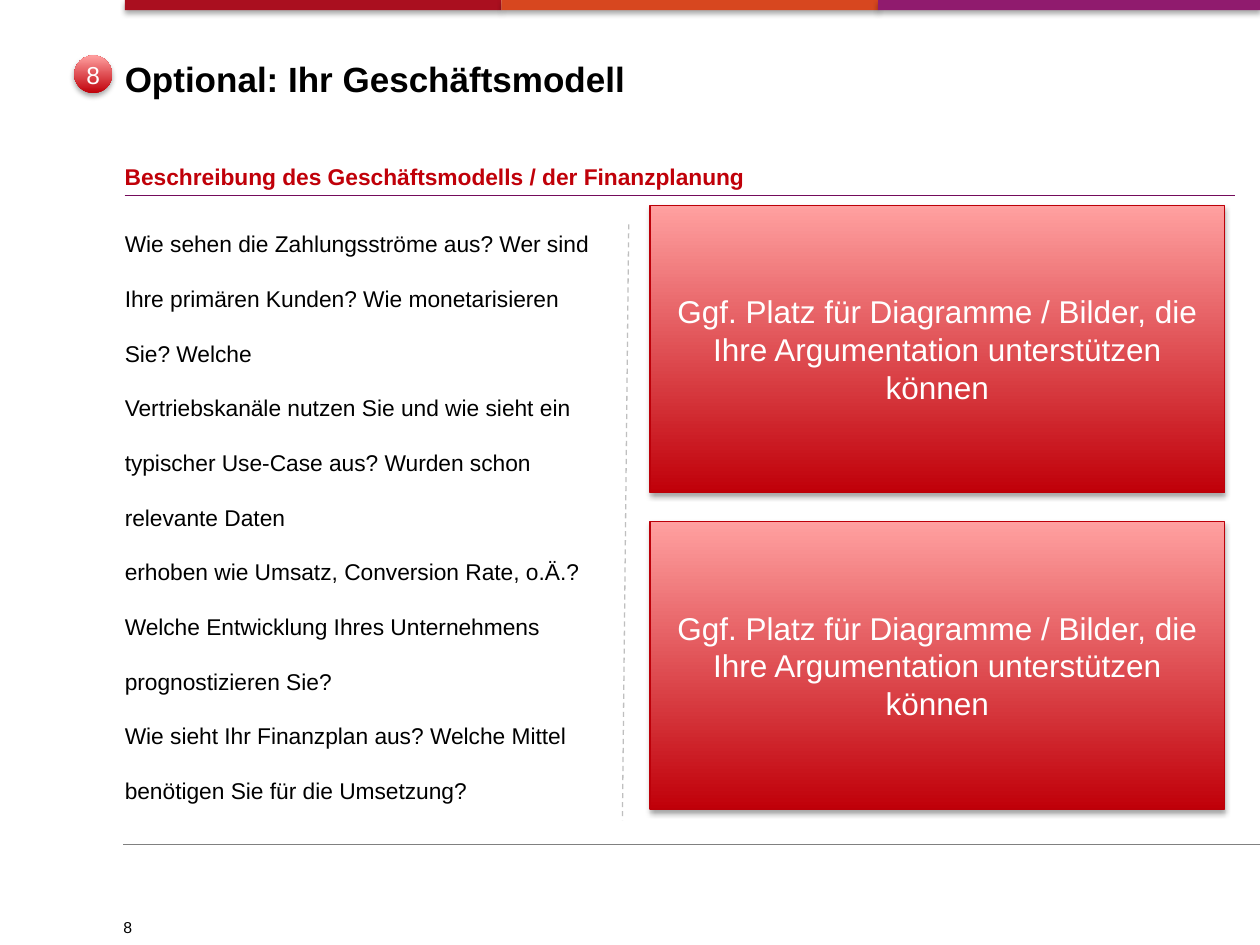
from lxml import etree
from pptx import Presentation
from pptx.dml.color import RGBColor
from pptx.enum import dml, shapes, text
from pptx.oxml import parse_xml
from pptx.oxml.ns import nsdecls, qn
from pptx.util import Inches, Pt

BLACK = RGBColor(0, 0, 0)
WHITE = RGBColor(0xFF, 0xFF, 0xFF)
RED = RGBColor(0xC0, 0x00, 0x09)
PINK = RGBColor(0xFF, 0xA0, 0xA0)
EDGE = RGBColor(0xBC, 0x00, 0x09)
BARS = [RGBColor(0xAA, 0x0F, 0x1F), RGBColor(0xD7, 0x47, 0x1F), RGBColor(0x90, 0x1B, 0x6E)]
PLUM = RGBColor(0x74, 0x0B, 0x5C)
GRAY = RGBColor(0x80, 0x80, 0x80)
PALE = RGBColor(0xBF, 0xBF, 0xBF)
LEFT = 0.99

SHADOW = (
    f'<a:effectLst {nsdecls("a")}>'
    '<a:outerShdw blurRad="39370" dist="22860" dir="5400000" rotWithShape="0">'
    '<a:srgbClr val="000000"><a:alpha val="35000"/></a:srgbClr>'
    '</a:outerShdw></a:effectLst>'
)


def write(frame, lines, size, color, bold=False, space=None,
          align=text.PP_ALIGN.LEFT, inset=0, wrap=True):
    frame.word_wrap = wrap
    frame.margin_left = frame.margin_right = Inches(inset)
    frame.margin_top = frame.margin_bottom = Inches(inset / 2)
    frame.text = "\n".join(lines)
    for para in frame.paragraphs:
        para.alignment = align
        para.line_spacing = space
        for run in para.runs:
            run.font.name = "Arial"
            run.font.size = Pt(size)
            run.font.bold = bold
            run.font.color.rgb = color


def draw(kind, x, y, w, h, fill=None, edge=None):
    item = slide.shapes.add_shape(kind, Inches(x), Inches(y), Inches(w), Inches(h))
    if fill:
        item.fill.solid()
        item.fill.fore_color.rgb = fill
    else:
        item.fill.gradient()
        item.fill.gradient_angle = 90
        for stop, color in zip(item.fill.gradient_stops, (RED, PINK)):
            stop.color.rgb = color
    if edge:
        item.line.color.rgb = edge
        item.line.width = Pt(0.75)
    else:
        item.line.fill.background()
    item._element.spPr.append(parse_xml(SHADOW))
    return item


deck = Presentation()
deck.slide_width, deck.slide_height = Inches(10), Inches(7.5)
slide = deck.slides.add_slide(deck.slide_layouts[5])
RECT = shapes.MSO_SHAPE.RECTANGLE
MID = text.PP_ALIGN.CENTER

# Coloured bars along the top edge
for i, color in enumerate(BARS):
    x = LEFT + i * 2.99
    draw(RECT, x, 0, min(2.99, 10 - x) if i < 2 else 10 - x, 0.08, color)

# Title
title = slide.shapes.title
title.left, title.top = Inches(LEFT), Inches(0.4)
title.width, title.height = Inches(8.81), Inches(0.96)
write(title.text_frame, ["Optional: Ihr Geschäftsmodell"], 20, BLACK, True, Pt(28))
title.text_frame.vertical_anchor = text.MSO_ANCHOR.TOP
title.text_frame.auto_size = text.MSO_AUTO_SIZE.NONE

# Subheading, questions and page number
QUERY = [
    "Wie sehen die Zahlungsströme aus? Wer sind Ihre primären Kunden? "
    "Wie monetarisieren Sie? Welche",
    "Vertriebskanäle nutzen Sie und wie sieht ein typischer Use-Case aus? "
    "Wurden schon relevante Daten",
    "erhoben wie Umsatz, Conversion Rate, o.Ä.? "
    "Welche Entwicklung Ihres Unternehmens prognostizieren Sie?",
    "Wie sieht Ihr Finanzplan aus? Welche Mittel benötigen Sie für die Umsetzung?",
]
HEAD = ["Beschreibung des Geschäftsmodells / der Finanzplanung"]
for x, y, w, h, lines, size, color, bold, space, wrap in [
    (LEFT, 1.29, 5.04, 0.24, HEAD, 13, RED, True, None, True),
    (LEFT, 1.61, 3.78, 4.75, QUERY, 13, BLACK, False, 2.0, True),
    (0.98, 7.27, 1.34, 0.19, ["8"], 9, BLACK, False, Pt(11.8), False),
]:
    box = slide.shapes.add_textbox(Inches(x), Inches(y), Inches(w), Inches(h))
    write(box.text_frame, lines, size, color, bold, space, wrap=wrap)

# Panels for diagrams
for y in (1.63, 4.14):
    panel = draw(RECT, 5.16, y, 4.56, 2.28, edge=EDGE)
    write(panel.text_frame, ["Ggf. Platz für Diagramme / Bilder, die Ihre "
                             "Argumentation unterstützen können"],
          18, WHITE, align=MID, inset=0.1)
    panel.text_frame.vertical_anchor = text.MSO_ANCHOR.MIDDLE

# Number badge
badge = draw(shapes.MSO_SHAPE.OVAL, 0.59, 0.44, 0.3, 0.3)
write(badge.text_frame, ["8"], 14, WHITE, align=MID, wrap=False)
badge.text_frame.vertical_anchor = text.MSO_ANCHOR.MIDDLE

# Rules: footer, subheading and dashed column divider
for x1, y1, x2, y2, color, width, dash in [
    (0.98, 6.7, 10, 6.7, GRAY, 0.5, None),
    (LEFT, 1.55, 9.8, 1.55, PLUM, 0.75, None),
    (4.99, 1.78, 4.94, 6.51, PALE, 0.75, dml.MSO_LINE.DASH),
]:
    rule = slide.shapes.add_connector(shapes.MSO_CONNECTOR.STRAIGHT, Inches(x1),
                                      Inches(y1), Inches(x2), Inches(y2))
    rule.line.color.rgb = color
    rule.line.width = Pt(width)
    rule.line.dash_style = dash
    etree.SubElement(rule._element.spPr, qn("a:effectLst"))

deck.save("out.pptx")
